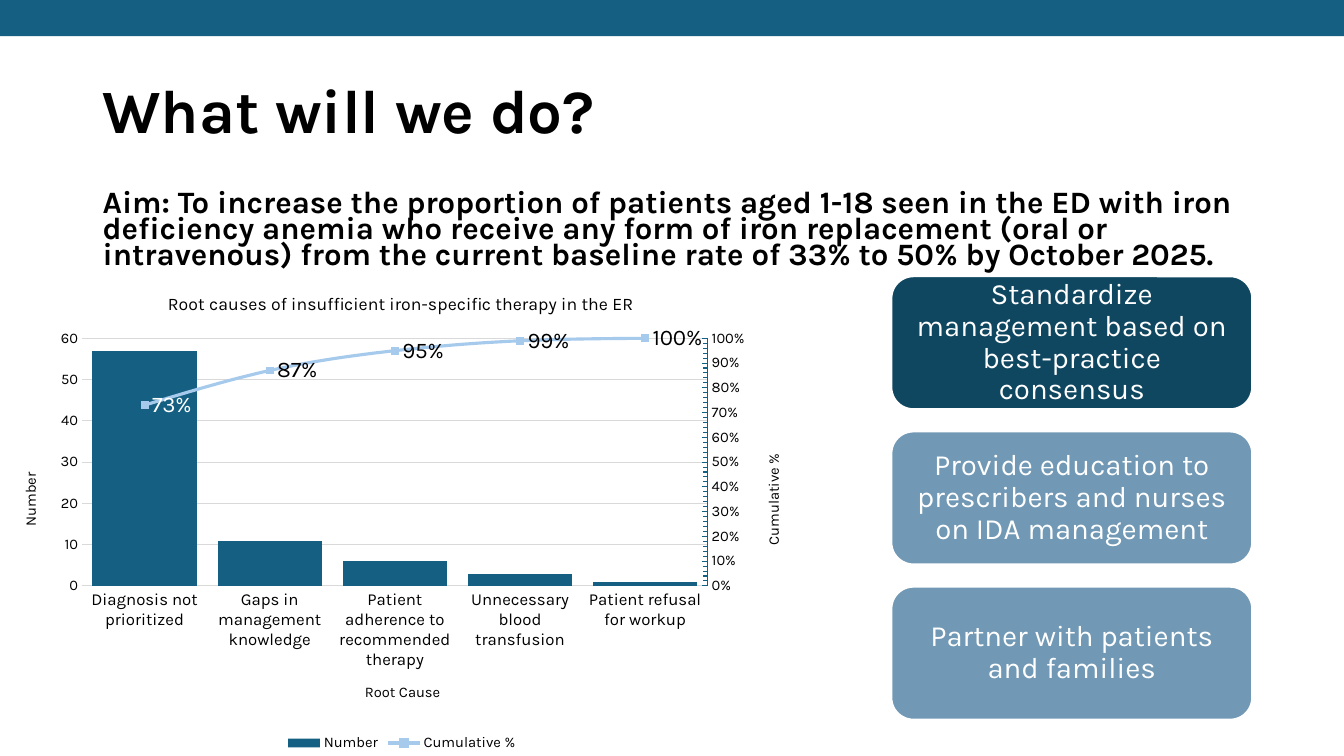
import copy

import pptx
import pptx.chart.axis
import pptx.chart.data
import pptx.dml.color
import pptx.enum.chart
import pptx.enum.shapes
import pptx.enum.text
import pptx.oxml
import pptx.oxml.ns
import pptx.util

Inches = pptx.util.Inches
Pt = pptx.util.Pt
qn = pptx.oxml.ns.qn
enums = pptx.enum.chart


class Theme:
    face = "Karla"
    black = pptx.dml.color.RGBColor.from_string("000000")
    white = pptx.dml.color.RGBColor.from_string("FFFFFF")
    blue = pptx.dml.color.RGBColor.from_string("156082")
    deep = pptx.dml.color.RGBColor.from_string("104760")
    soft = pptx.dml.color.RGBColor.from_string("7198B4")
    sky = pptx.dml.color.RGBColor.from_string("A6CAEC")
    grey = pptx.dml.color.RGBColor.from_string("D9D9D9")
    title, aim, card = 44, 22.2, 21
    head, axis, cause, label = 12.6, 10.5, 12, 16


def style(font, size, color=Theme.black, bold=False):
    font.name = Theme.face
    font.size = Pt(size)
    font.bold = bold
    font.color.rgb = color


def write(frame, words, size, color=Theme.black, bold=False, space=None):
    frame.word_wrap = True
    para = frame.paragraphs[0]
    if space:
        para.line_spacing = space
    run = para.add_run()
    run.text = words
    style(run.font, size, color, bold)
    return para


deck = pptx.Presentation()
deck.slide_width = Inches(13.33)
deck.slide_height = Inches(7.5)
slide = deck.slides.add_slide(deck.slide_layouts[6])
shapes = slide.shapes

# Title and aim
anchor = pptx.enum.text.MSO_ANCHOR
for words, top, height, size, space, place in (
    ("What will we do?", 0.4, 1.45, Theme.title, 0.9, anchor.MIDDLE),
    ("Aim: To increase the proportion of patients aged 1-18 seen in the ED "
     "with iron deficiency anemia who receive any form of iron replacement "
     "(oral or intravenous) from the current baseline rate of 33% to 50% "
     "by October 2025.", 1.84, 0.9, Theme.aim, 0.7, anchor.BOTTOM),
):
    box = shapes.add_textbox(Inches(0.92), Inches(top), Inches(11.5), Inches(height))
    box.text_frame.vertical_anchor = place
    write(box.text_frame, words, size, bold=True, space=space)

# Pareto chart: both series start as columns
data = pptx.chart.data.CategoryChartData()
data.categories = [
    "Diagnosis not prioritized",
    "Gaps in management knowledge",
    "Patient adherence to recommended therapy",
    "Unnecessary blood transfusion",
    "Patient refusal for workup",
]
data.add_series("Number", (57, 11, 6, 3, 1), "General")
data.add_series("Cumulative %", (0.73, 0.87, 0.95, 0.99, 1), "0%")
chart = shapes.add_chart(
    enums.XL_CHART_TYPE.COLUMN_CLUSTERED,
    Inches(0), Inches(2.71), Inches(7.97), Inches(4.79), data,
).chart
style(chart.font, Theme.axis)
chart.has_title = True
write(chart.chart_title.text_frame,
      "Root causes of insufficient iron-specific therapy in the ER", Theme.head)
chart.chart_title.include_in_layout = False
chart.has_legend = True
chart.legend.position = enums.XL_LEGEND_POSITION.BOTTOM
chart.legend.include_in_layout = False
style(chart.legend.font, Theme.axis)

# Move the second series to a line plot
bars = chart.plots[0]
bars.gap_width = 20
bars.vary_by_categories = False
moved = bars.series[1]._element
for flag in moved.findall(qn("c:invertIfNegative")):
    moved.remove(flag)
plot = pptx.oxml.parse_xml(
    '<c:lineChart xmlns:c="http://schemas.openxmlformats.org/drawingml/2006/chart">'
    '<c:grouping val="standard"/><c:varyColors val="0"/><c:marker val="1"/>'
    '<c:axId val="501"/><c:axId val="502"/></c:lineChart>'
)
plot.insert(2, moved)
area = chart._chartSpace.find(".//" + qn("c:plotArea"))
area.find(qn("c:barChart")).addnext(plot)

# Second pair of axes
left = area.find(qn("c:valAx"))
base = area.find(qn("c:catAx"))
right = copy.deepcopy(left)
twin = copy.deepcopy(base)
for node, own, other in ((right, "502", "501"), (twin, "501", "502")):
    node.find(qn("c:axId")).set("val", own)
    node.find(qn("c:crossAx")).set("val", other)
right.find(qn("c:axPos")).set("val", "r")
right.find(qn("c:crosses")).set("val", "max")
left.addnext(right)
right.addnext(twin)
pptx.chart.axis.CategoryAxis(twin).visible = False
cause = pptx.chart.axis.CategoryAxis(base)
count = pptx.chart.axis.ValueAxis(left)
percent = pptx.chart.axis.ValueAxis(right)

# Axis styles
ticks = enums.XL_TICK_MARK
for axis, name, size, tick, turn in (
    (cause, "Root Cause", Theme.cause, ticks.NONE, "0"),
    (count, "Number", Theme.axis, ticks.NONE, "-5400000"),
    (percent, "Cumulative %", Theme.axis, ticks.INSIDE, "-5400000"),
):
    axis.has_title = True
    frame = axis.axis_title.text_frame
    write(frame, name, Theme.axis)
    frame._txBody.find(qn("a:bodyPr")).set("rot", turn)
    axis.major_tick_mark = axis.minor_tick_mark = tick
    axis.has_major_gridlines = False
    style(axis.tick_labels.font, size)
    axis.format.line.width = Pt(0.75)
cause.format.line.color.rgb = Theme.grey
percent.format.line.color.rgb = Theme.blue
percent.minimum_scale, percent.maximum_scale, percent.major_unit = 0, 1, 0.1
percent.tick_labels.number_format = "0%"
percent.tick_labels.number_format_is_linked = False
count.minimum_scale, count.maximum_scale, count.major_unit = 0, 60, 10
count.tick_labels.number_format = "0"
count.tick_labels.number_format_is_linked = False
count.format.line.fill.background()
count.has_major_gridlines = True
count.major_gridlines.format.line.color.rgb = Theme.grey
count.major_gridlines.format.line.width = Pt(0.75)

# Series styles
fill = chart.plots[0].series[0].format.fill
fill.solid()
fill.fore_color.rgb = Theme.blue
line = chart.plots[1].series[0]
line.smooth = True
line.format.line.color.rgb = Theme.sky
line.format.line.width = Pt(2.25)
line.marker.style = enums.XL_MARKER_STYLE.SQUARE
line.marker.size = 5
line.marker.format.fill.solid()
line.marker.format.fill.fore_color.rgb = Theme.sky
line.marker.format.line.color.rgb = Theme.sky
labels = line.data_labels
labels.show_value = True
labels.number_format = "0%"
labels.number_format_is_linked = False
labels.position = enums.XL_LABEL_POSITION.RIGHT
style(labels.font, Theme.label)
first = line.points[0].data_label
style(first.font, Theme.label, Theme.white)
first.position = enums.XL_LABEL_POSITION.RIGHT

# Action cards
kinds = pptx.enum.shapes.MSO_SHAPE
for row, (words, color) in enumerate((
    ("Standardize management based on best-practice consensus", Theme.deep),
    ("Provide education to prescribers and nurses on IDA management", Theme.soft),
    ("Partner with patients and families", Theme.soft),
)):
    card = shapes.add_shape(kinds.ROUNDED_RECTANGLE, Inches(8.84),
                            Inches(2.74 + 1.54 * row), Inches(3.58), Inches(1.32))
    card.shadow.inherit = False
    card.fill.solid()
    card.fill.fore_color.rgb = color
    card.line.color.rgb = Theme.white
    card.line.width = Pt(1.5)
    frame = card.text_frame
    frame.vertical_anchor = anchor.MIDDLE
    frame.margin_left = frame.margin_right = Inches(0.09)
    frame.margin_top = frame.margin_bottom = Inches(0.09)
    para = write(frame, words, Theme.card, Theme.white, space=0.9)
    para.alignment = pptx.enum.text.PP_ALIGN.CENTER

# Top band
band = shapes.add_shape(kinds.RECTANGLE, 0, 0, deck.slide_width, Inches(0.36))
band.shadow.inherit = False
band.fill.solid()
band.fill.fore_color.rgb = Theme.blue
band.line.fill.background()

deck.save("out.pptx")
